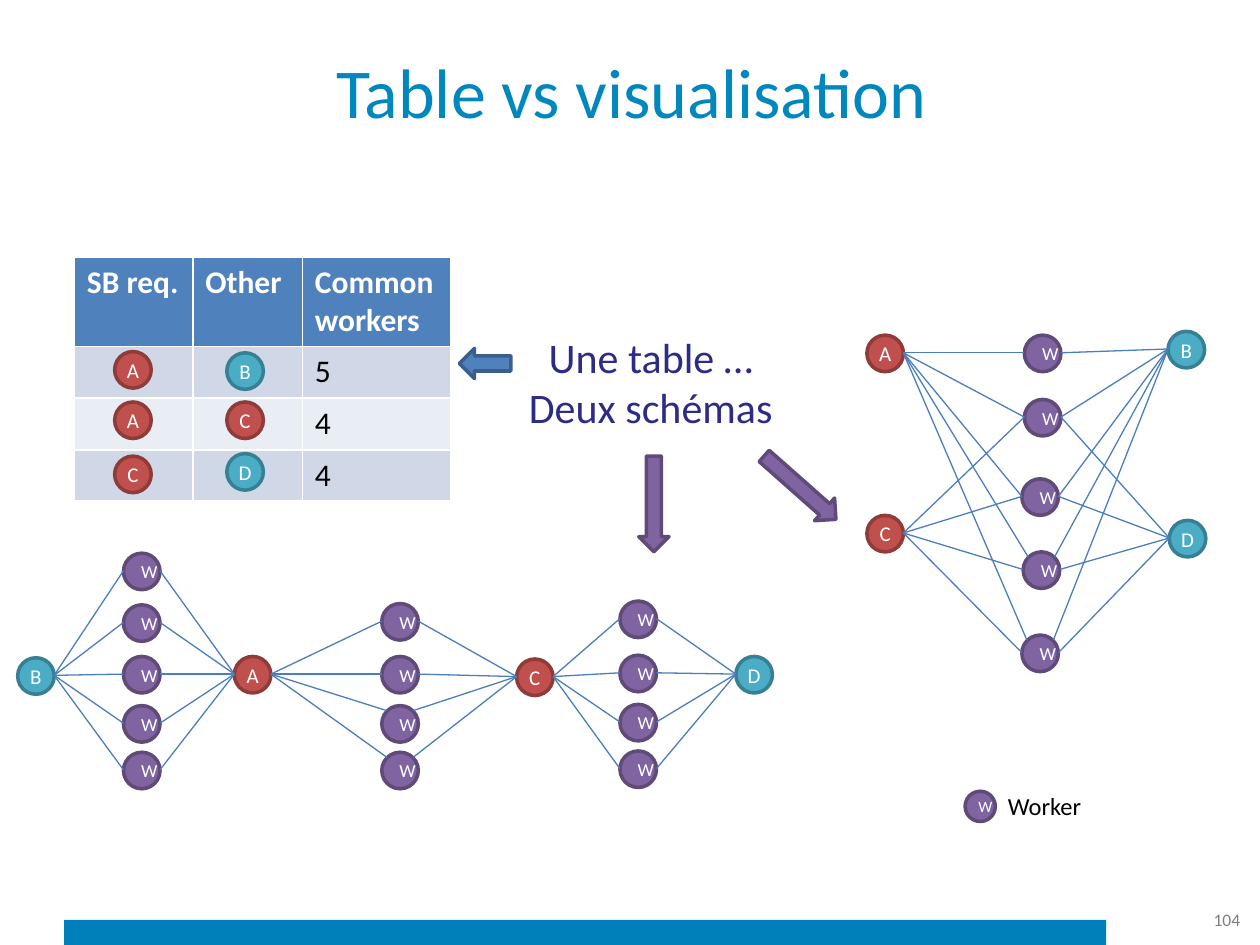
from lxml import etree
from pptx import Presentation
from pptx import util as u
from pptx.dml.color import RGBColor
from pptx.enum import shapes, text
from pptx.oxml.ns import qn

PX = 9144
NODE = 29
COLORS = {
    "white": "FFFFFF", "black": "000000", "grey": "808080", "navy": "2C2C86",
    "title": "0087BE", "bar": "0080BB", "edge": "4B7EBC",
    "red": "C0504D", "red_line": "8E3B39", "teal": "4BACC6", "teal_line": "377F92",
    "purple": "8064A2", "purple_line": "5F4A78", "blue": "4F81BD", "blue_line": "3A5F8C",
    "band_dark": "D0D8E8", "band_light": "E9EDF4",
}
KINDS = {"A": "red", "C": "red", "B": "teal", "D": "teal", "W": "purple"}
INSETS = {"red": (4, 5), "teal": (0, 0)}
SITES = {"left": (0, 14), "right": (29, 14), "upper left": (4, 4), "upper right": (25, 4)}

deck = Presentation()
deck.slide_width, deck.slide_height = 1000 * PX, 750 * PX
page = deck.slides.add_slide(deck.slide_layouts[5])


def write(frame, lines, size, color, align="LEFT", bold=False):
    for number, line in enumerate(lines):
        para = frame.paragraphs[0] if number == 0 else frame.add_paragraph()
        para.alignment = getattr(text.PP_ALIGN, align)
        span = para.add_run()
        span.text = line
        look = {"name": "Calibri", "size": u.Pt(size), "bold": bold}
        for key, value in look.items():
            setattr(span.font, key, value)
        span.font.color.rgb = RGBColor.from_string(COLORS[color])


def draw(preset, place, color, turn=0):
    shape = page.shapes.add_shape(getattr(shapes.MSO_SHAPE, preset), *(n * PX for n in place))
    shape.shadow.inherit = False
    shape.rotation = turn
    shape.fill.solid()
    shape.fill.fore_color.rgb = RGBColor.from_string(COLORS[color])
    if color + "_line" in COLORS:
        shape.line.width = u.Pt(2)
        shape.line.color.rgb = RGBColor.from_string(COLORS[color + "_line"])
    else:
        shape.line.fill.background()
    return shape


draw("RECTANGLE", (51, 730, 827, 20), "bar")

title = page.shapes.title
place = {"left": 51, "top": 21, "width": 900, "height": 101}
for key, value in place.items():
    setattr(title, key, value * PX)
title.text_frame.vertical_anchor = text.MSO_ANCHOR.MIDDLE
write(title.text_frame, ["Table vs visualisation"], 40, "title", "CENTER")

rows = [["SB req.", "Other", "Common workers"], ["", "", "5"], ["", "", "4"], ["", "", "4"]]
fills = ["blue", "band_dark", "band_light", "band_dark"]
table = page.shapes.add_table(4, 3, 59 * PX, 204 * PX, 299 * PX, 192 * PX).table
for column, width in zip(table.columns, (94, 87, 118)):
    column.width = width * PX
for row, height in zip(table.rows, (70, 41, 41, 40)):
    row.height = height * PX
for r, (row, fill) in enumerate(zip(rows, fills)):
    for c, value in enumerate(row):
        cell = table.cell(r, c)
        cell.fill.solid()
        cell.fill.fore_color.rgb = RGBColor.from_string(COLORS[fill])
        if value:
            write(cell.text_frame, [value], 18, "black" if r else "white", bold=r == 0)

chain = {"B": (14, 522), "A": (186, 521), "C": (410, 523), "D": (584, 521)}
for column, x, tops in (("p", 98, (439, 480, 521, 560, 597)),
                        ("q", 303, (479, 521, 560, 597)),
                        ("r", 492, (477, 520, 559, 596))):
    for number, top in enumerate(tops, 1):
        chain[f"W{column}{number}"] = (x, top)

network = {
    "A": (688, 266), "C": (688, 409), "B": (927, 263), "D": (928, 413),
    "W1": (813, 266), "W2": (813, 317), "W3": (811, 380), "W4": (812, 438), "W5": (811, 504),
}

chain_edges = [
    ("B", "right", "Wp1 Wp2 Wp3 Wp4 Wp5", "left"),
    ("A", "left", "Wp1 Wp2 Wp3 Wp4 Wp5", "right"),
    ("A", "right", "Wq1 Wq2", "left"),
    ("A", "right", "Wq3 Wq4", "upper left"),
    ("C", "left", "Wq1 Wq2", "right"),
    ("C", "left", "Wq3 Wq4", "upper right"),
    ("C", "right", "Wr1 Wr2 Wr3 Wr4", "left"),
    ("D", "left", "Wr1 Wr2 Wr3 Wr4", "right"),
]
network_edges = [
    ("A", "right", "W1 W2 W3", "left"),
    ("A", "right", "W4 W5", "upper left"),
    ("B", "left", "W1 W2 W3", "right"),
    ("B", "left", "W4", "upper right"),
    ("B", "upper left", "W5", "upper right"),
    ("C", "right", "W2 W3 W4 W5", "left"),
    ("D", "left", "W2 W3 W4 W5", "right"),
]
table_nodes = {
    "A1": (91, 279), "A2": (91, 319), "C1": (91, 362),
    "C2": (180, 319), "B": (180, 280), "D": (180, 360),
}
legend = {"W": (766, 628)}

for nodes, edges, size in ((chain, chain_edges, NODE), (network, network_edges, NODE),
                           (table_nodes, [], NODE), (legend, [], 24)):
    for name, (x, y) in nodes.items():
        letter = name[0]
        kind = KINDS[letter]
        frame = draw("OVAL", (x, y, size, size), kind).text_frame
        frame.vertical_anchor = text.MSO_ANCHOR.MIDDLE
        if kind in INSETS:
            across, down = INSETS[kind]
            frame.margin_left = frame.margin_right = across * PX
            frame.margin_top = frame.margin_bottom = down * PX
        points = 9 if size < NODE else 10.5 if letter == "W" else 12
        write(frame, [letter], points, "white", "CENTER")
    for hub, hub_site, workers, worker_site in edges:
        for worker in workers.split():
            ends = [(at + shift) * PX
                    for node, site in ((hub, hub_site), (worker, worker_site))
                    for at, shift in zip(nodes[node], SITES[site])]
            line = page.shapes.add_connector(shapes.MSO_CONNECTOR.STRAIGHT, *ends)
            line.line.width = u.Pt(0.75)
            line.line.color.rgb = RGBColor.from_string(COLORS["edge"])
            etree.SubElement(line._element.spPr, qn("a:effectLst"))

for place, color, turn in (((373, 268, 24, 41), "blue", 90),
                           ((507, 362, 24, 76), "purple", 0),
                           ((623, 349, 24, 76), "purple", 311.5)):
    draw("DOWN_ARROW", place, color, turn)

for place, lines, size, color, align, wrap, anchor in (
    ((790, 623, 79, 34), ["Worker"], 14, "black", "LEFT", False, "TOP"),
    ((409, 258, 215, 91), ["Une table …", "Deux schémas"], 24, "navy", "CENTER", False, "TOP"),
    ((912, 710, 82, 40), ["104"], 10, "grey", "RIGHT", True, "MIDDLE"),
):
    box = page.shapes.add_textbox(*(n * PX for n in place))
    box.text_frame.word_wrap = wrap
    box.text_frame.vertical_anchor = getattr(text.MSO_ANCHOR, anchor)
    if not wrap:
        box.text_frame.auto_size = text.MSO_AUTO_SIZE.SHAPE_TO_FIT_TEXT
    write(box.text_frame, lines, size, color, align)

deck.save("out.pptx")
